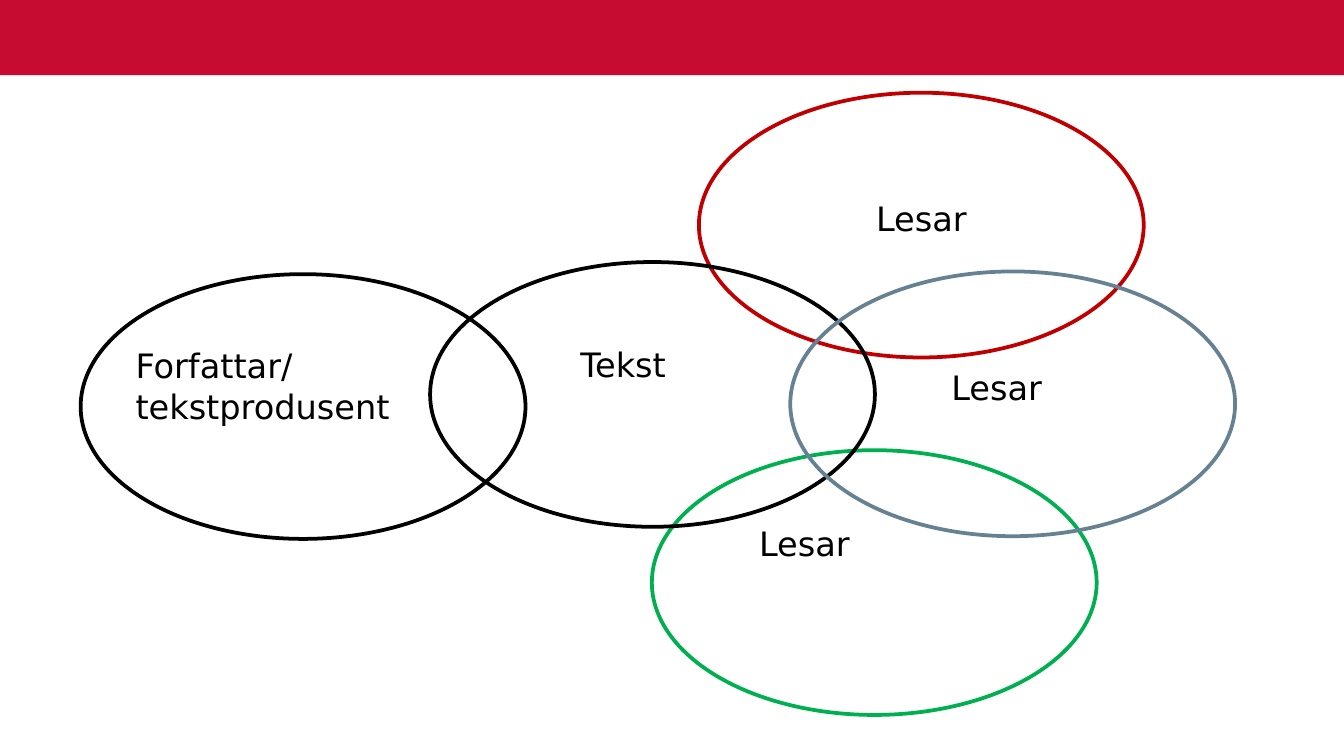
from pptx import Presentation
from pptx.dml.color import RGBColor
from pptx.enum.shapes import MSO_SHAPE
from pptx.enum.text import MSO_ANCHOR, MSO_AUTO_SIZE, PP_ALIGN
from pptx.util import Inches, Pt

RECT, OVAL = MSO_SHAPE.RECTANGLE, MSO_SHAPE.OVAL
TOP, LEFT = MSO_ANCHOR.TOP, PP_ALIGN.LEFT
FIT = MSO_AUTO_SIZE.SHAPE_TO_FIT_TEXT

BLACK = RGBColor(0, 0, 0)
BRAND = RGBColor(0xC6, 0x0C, 0x30)
RED = RGBColor(0xC0, 0, 0)
GREEN = RGBColor(0, 0xB0, 0x50)
SLATE = RGBColor(0x66, 0x82, 0x92)

WIDE = Inches(10)
HIGH = WIDE * 9 // 16
COL, ROW = WIDE / 100, HIGH / 56.25
OVAL_W, OVAL_H = 33.1, 19.7
LINE_H, PAD = 3.1, 0.9

RINGS = [
    (52, 6.9, RED, (12.2, 7.3), 11, ["Lesar"]),
    (48.5, 33.5, GREEN, (7, 4.9), 11, ["Lesar"]),
    (6, 20.4, BLACK, (3.1, 4.8), 22.8, ["Forfattar/", "tekstprodusent"]),
    (32, 19.5, BLACK, (10.2, 5.6), 12.6, ["Tekst"]),
    (58.8, 20.2, SLATE, (11, 6.6), 11, ["Lesar"]),
]


def place(box):
    x, y, w, h = box
    return round(x * COL), round(y * ROW), round(w * COL), round(h * ROW)


def add_text(slide, box, lines, size=18, font="DejaVu Sans", color=BLACK):
    frame = slide.shapes.add_textbox(*place(box)).text_frame
    frame.word_wrap = True
    frame.auto_size = FIT
    frame.vertical_anchor = TOP
    frame.text = "\n".join(lines)
    for para in frame.paragraphs:
        para.alignment = LEFT
        para.font.size = Pt(size)
        para.font.name = font
        para.font.color.rgb = color


def add_band(slide, box):
    band = slide.shapes.add_shape(RECT, *place(box))
    band.shadow.inherit = False
    band.fill.solid()
    band.fill.fore_color.rgb = BRAND
    band.line.fill.background()


def add_ring(slide, box, color, shift, width, lines):
    ring = slide.shapes.add_shape(OVAL, *place(box))
    ring.shadow.inherit = False
    ring.fill.background()
    ring.line.color.rgb = color
    ring.line.width = Pt(2)
    left, top = box[0] + shift[0], box[1] + shift[1]
    add_text(slide, (left, top, width, PAD + LINE_H * len(lines)), lines)


def main():
    deck = Presentation()
    deck.slide_width, deck.slide_height = WIDE, HIGH
    slide = deck.slides.add_slide(deck.slide_layouts[6])
    add_band(slide, (0, 0, 100, 5.6))
    for x, y, color, shift, width, lines in RINGS:
        add_ring(slide, (x, y, OVAL_W, OVAL_H), color, shift, width, lines)
    deck.save("out.pptx")


if __name__ == "__main__":
    main()
